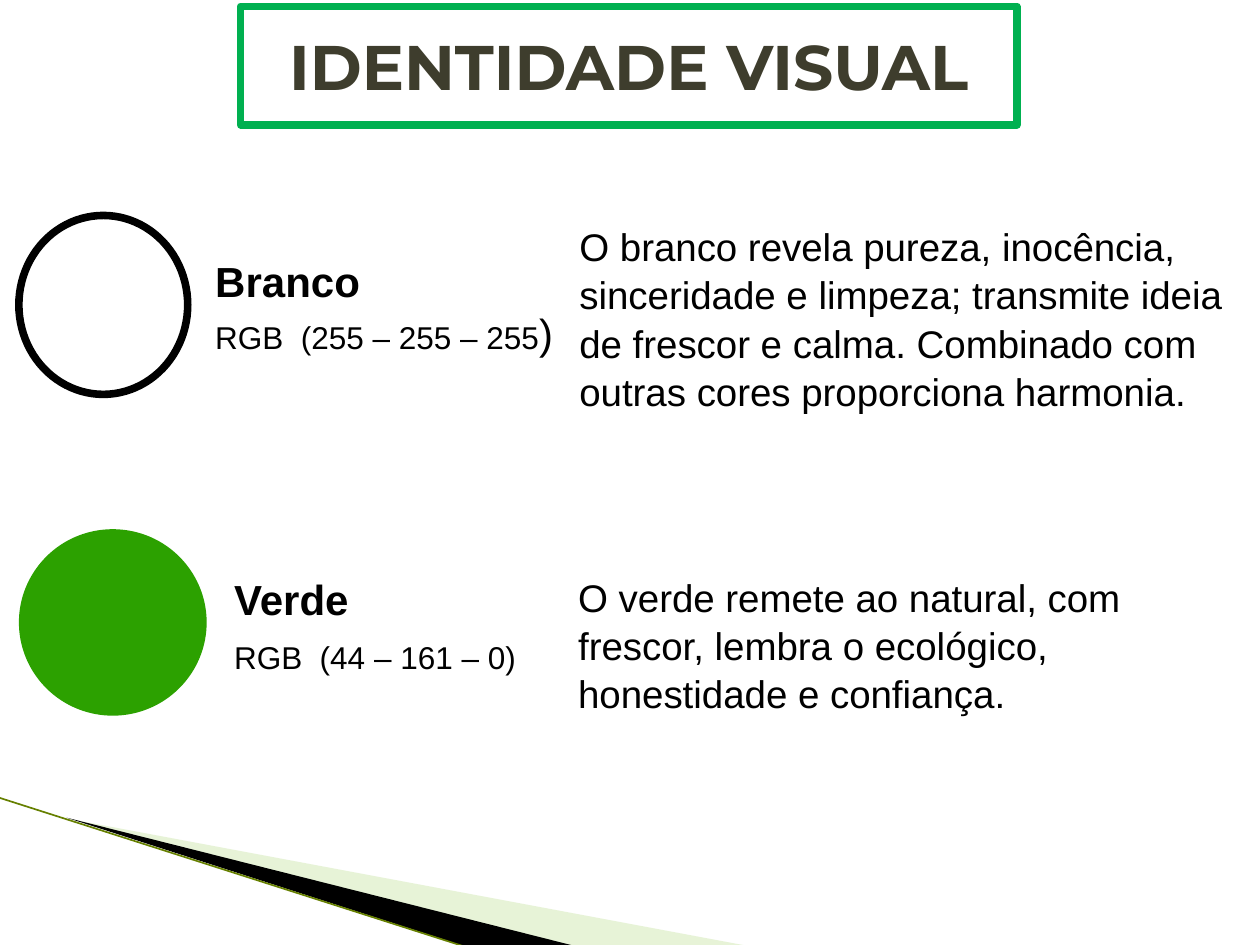
from lxml import etree
from pptx import Presentation
from pptx.dml.color import RGBColor
from pptx.enum.shapes import MSO_CONNECTOR, MSO_SHAPE
from pptx.enum.text import MSO_ANCHOR, PP_ALIGN
from pptx.oxml.ns import qn
from pptx.util import Inches, Pt

STRAIGHT = MSO_CONNECTOR.STRAIGHT
ELLIPSE = MSO_SHAPE.OVAL
MIDDLE = MSO_ANCHOR.MIDDLE
CENTER = PP_ALIGN.CENTER

COLORS = {
    "white": "FFFFFF",
    "black": "000000",
    "green": "2CA100",
    "frame": "00B050",
    "title": "3E3D2D",
    "pale": "C3E19D",
    "olive": "668000",
}
OUTLINE = 4.33
LINE_SPACING = 1.04
TITLE_ONLY = 5


def color(name):
    return RGBColor.from_string(COLORS[name])


def paint(shape, fill, line=None):
    shape.fill.solid()
    shape.fill.fore_color.rgb = color(fill)
    if line:
        shape.line.color.rgb = color(line)
        shape.line.width = Pt(OUTLINE)
    else:
        shape.line.fill.background()


def style(run, size, bold=False, font="Arial", ink="black"):
    run.font.name = font
    run.font.size = Pt(size)
    run.font.bold = bold
    run.font.color.rgb = color(ink)


def add_wedge(slide, points, fill, opacity=None):
    corners = [(Inches(x), Inches(y)) for x, y in points]
    builder = slide.shapes.build_freeform(*corners[0])
    builder.add_line_segments(corners[1:], close=True)
    wedge = builder.convert_to_shape()
    wedge.shadow.inherit = False
    paint(wedge, fill)
    if opacity:
        tint = wedge.fill._xPr.find(".//" + qn("a:srgbClr"))
        etree.SubElement(tint, qn("a:alpha")).set("val", str(opacity * 1000))


def add_edge(slide, start, end):
    edge = slide.shapes.add_connector(STRAIGHT, *map(Inches, start + end))
    edge.line.color.rgb = color("olive")
    edge.line.width = Pt(0.95)
    etree.SubElement(edge._element.spPr, qn("a:effectLst"))


def add_corner(slide):
    add_wedge(slide, [(0.55, 6.5), (5.95, 7.51), (4.56, 7.51)], "pale", 40)
    add_wedge(slide, [(0.53, 6.49), (4.57, 7.51), (3.72, 7.52)], "black")
    add_edge(slide, (-0.01, 6.33), (3.71, 7.52))


def add_title(slide, text):
    title = slide.shapes.title
    title.left, title.top, title.width, title.height = map(Inches, (1.91, 0.05, 6.16, 0.94))
    paint(title, "white", "frame")
    title.text_frame.text = text
    title.text_frame.vertical_anchor = MIDDLE
    para = title.text_frame.paragraphs[0]
    para.alignment = CENTER
    style(para.runs[0], 36, True, "Montserrat", "title")


def add_swatch(slide, place, fill, line=None):
    swatch = slide.shapes.add_shape(ELLIPSE, *map(Inches, place))
    swatch.shadow.inherit = False
    paint(swatch, fill, line)


def add_text(slide, place, paragraphs, wrap=True):
    """Each paragraph is a list of (text, size, bold) runs."""
    box = slide.shapes.add_textbox(*map(Inches, place))
    frame = box.text_frame
    frame.word_wrap = wrap
    for index, pieces in enumerate(paragraphs):
        para = frame.add_paragraph() if index else frame.paragraphs[0]
        para.line_spacing = LINE_SPACING
        for text, size, bold in pieces:
            run = para.add_run()
            run.text = text
            style(run, size, bold)


def main():
    deck = Presentation()
    deck.slide_width, deck.slide_height = Inches(10), Inches(7.5)
    page = deck.slides.add_slide(deck.slide_layouts[TITLE_ONLY])

    add_corner(page)
    add_title(page, "IDENTIDADE VISUAL")

    add_swatch(page, (0.15, 1.71, 1.34, 1.42), "white", "black")
    add_text(page, (1.61, 1.96, 4.02, 0.91), [
        [("Branco", 24, True)],
        [("RGB  (255 – 255 – 255", 18, False), (")", 24, False)],
    ])
    add_text(page, (4.5, 1.71, 5.5, 1.58), [[(
        "O branco revela pureza, inocência, sinceridade e limpeza; "
        "transmite ideia de frescor e calma. Combinado com outras cores "
        "proporciona harmonia.", 22, False)]])

    add_swatch(page, (0.15, 4.2, 1.49, 1.48), "green")
    add_text(page, (1.76, 4.49, 1.12, 0.5), [[("Verde", 24, True)]], wrap=False)
    add_text(page, (1.76, 5, 2.46, 0.4), [[("RGB  (44 – 161 – 0)", 18, False)]], wrap=False)
    add_text(page, (4.49, 4.49, 5, 1.21), [[(
        "O verde remete ao natural, com frescor, lembra o ecológico, "
        "honestidade e confiança.", 22, False)]])

    deck.save("out.pptx")


if __name__ == "__main__":
    main()
